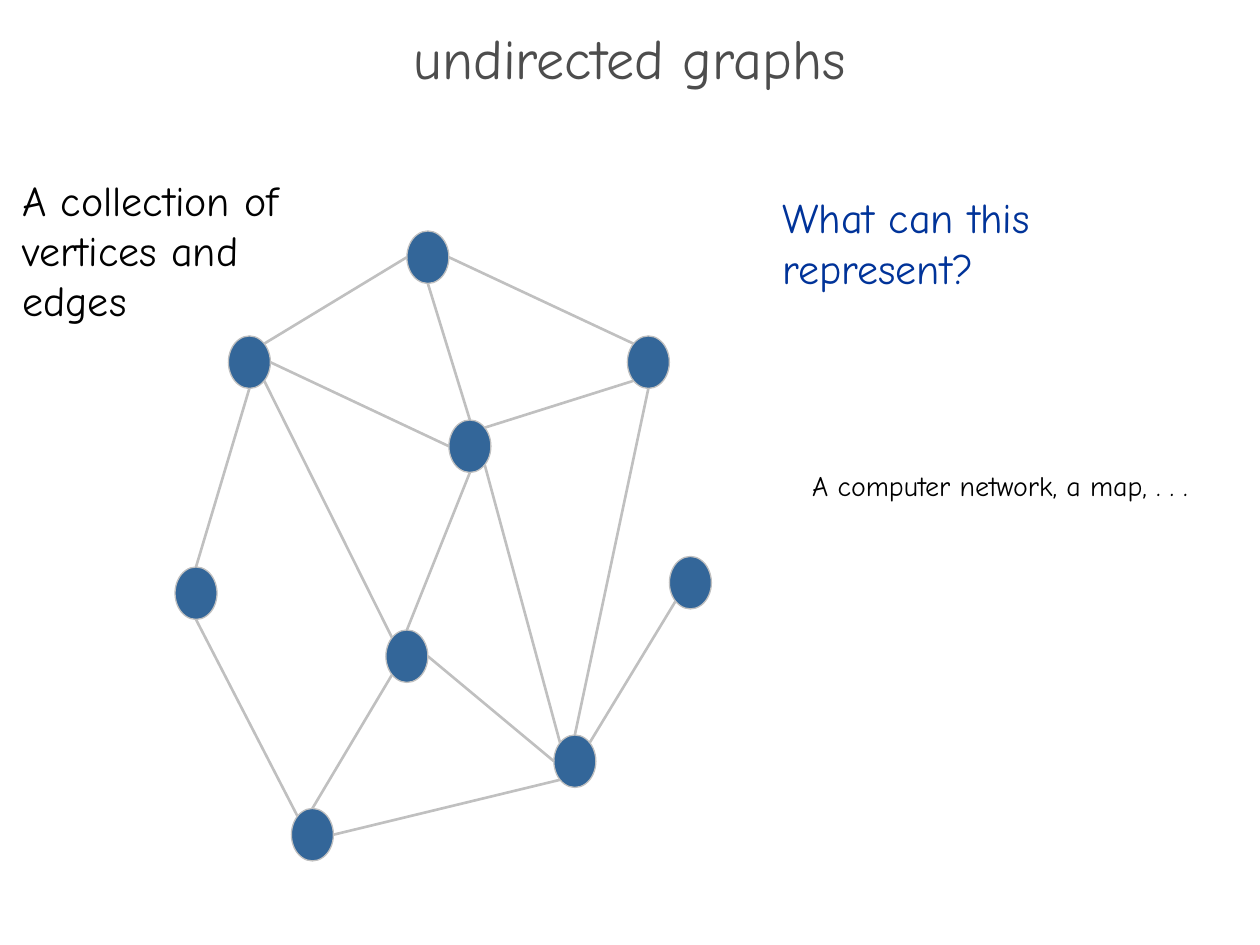
from math import sqrt

from lxml.etree import SubElement
from pptx import Presentation
from pptx.dml.color import RGBColor
from pptx.enum.shapes import MSO_CONNECTOR as Connector, MSO_SHAPE as Shape
from pptx.enum.text import MSO_ANCHOR as Anchor, PP_ALIGN as Align
from pptx.oxml.ns import qn
from pptx.util import Pt

FONT = "Comic Neue"
GREY = RGBColor(0x4D, 0x4D, 0x4D)
NAVY = RGBColor(0x00, 0x33, 0x99)
BLACK = RGBColor(0x00, 0x00, 0x00)
BLUE = RGBColor(0x33, 0x66, 0x99)
SILVER = RGBColor(0xC0, 0xC0, 0xC0)

NODE_W, NODE_H = 24, 30
DIAG = 1 / sqrt(2)

# Points on a vertex's rim, as fractions of its half width and half height
RIM = {
    "N": (0, -1), "NE": (DIAG, -DIAG), "E": (1, 0), "SE": (DIAG, DIAG),
    "S": (0, 1), "SW": (-DIAG, DIAG), "W": (-1, 0), "NW": (-DIAG, -DIAG),
}

# Vertex centres, relative to the graph's box
VERTICES = {
    "A": (144.5, 15), "B": (42.5, 75), "C": (294.5, 201),
    "D": (168.5, 123), "E": (132.5, 243), "F": (12, 207),
    "G": (270.5, 75), "H": (78.5, 345), "I": (228.5, 303),
}

# Each edge: start vertex and rim point, end vertex and rim point
EDGES = [
    ("A", "W", "B", "NE"), ("B", "S", "F", "N"), ("F", "S", "H", "NW"),
    ("H", "E", "I", "SW"), ("A", "E", "G", "NW"), ("A", "S", "D", "N"),
    ("B", "E", "D", "W"), ("B", "SE", "E", "NW"), ("D", "S", "E", "N"),
    ("E", "SW", "H", "N"), ("G", "SW", "D", "NE"), ("C", "SW", "I", "NE"),
    ("E", "E", "I", "W"), ("G", "S", "I", "N"), ("D", "SE", "I", "NW"),
]


def add_text(s, box, lines, size, color, wrap=True):
    """Place a text box with one paragraph per line and return its frame."""
    tf = s.shapes.add_textbox(*map(Pt, box)).text_frame
    tf.word_wrap = wrap
    tf.text = "\n".join(lines)
    for p in tf.paragraphs:
        p.font.name = FONT
        p.font.size = Pt(size)
        p.font.color.rgb = color
    return tf


def add_title(s, box):
    tf = add_text(s, box, ["undirected graphs"], 32, GREY)
    tf.vertical_anchor = Anchor.MIDDLE
    p = tf.paragraphs[0]
    p.alignment = Align.CENTER
    p.line_spacing = 0.7


def add_graph(s, left, top):
    # Vertices
    for x, y in VERTICES.values():
        sp = s.shapes.add_shape(
            Shape.OVAL, Pt(left + x - NODE_W / 2), Pt(top + y - NODE_H / 2),
            Pt(NODE_W), Pt(NODE_H))
        sp.shadow.inherit = False
        sp.fill.solid()
        sp.fill.fore_color.rgb = BLUE
        sp.line.color.rgb = SILVER
        sp.line.width = Pt(0.75)

    def rim_point(vertex, side):
        x, y = VERTICES[vertex]
        dx, dy = RIM[side]
        return Pt(left + x + dx * NODE_W / 2), Pt(top + y + dy * NODE_H / 2)

    # Edges
    for start, start_side, end, end_side in EDGES:
        line = s.shapes.add_connector(
            Connector.STRAIGHT,
            *rim_point(start, start_side), *rim_point(end, end_side))
        line.line.color.rgb = SILVER
        line.line.width = Pt(1.5)
        SubElement(line._element.spPr, qn("a:effectLst"))


def add_notes_on_graph(s):
    # Question on the right
    tf = add_text(s, (440, 106, 244, 371), ["What can this represent?"], 24, NAVY)
    tf.paragraphs[0].space_after = Pt(6)
    # Definition on the left
    add_text(s, (5.75, 96, 201.5, 94),
             ["A collection of", "vertices and edges"], 24, BLACK)
    # Answer
    add_text(s, (457, 264, 250, 27),
             ["A computer network, a map, . . ."], 16, BLACK, wrap=False)


def main():
    prs = Presentation()
    prs.slide_width, prs.slide_height = Pt(720), Pt(540)
    s = prs.slides.add_slide(prs.slide_layouts[6])
    add_title(s, (0, 19.5, 720, 36))
    add_graph(s, 100, 132)
    add_notes_on_graph(s)
    prs.save("out.pptx")


if __name__ == "__main__":
    main()
